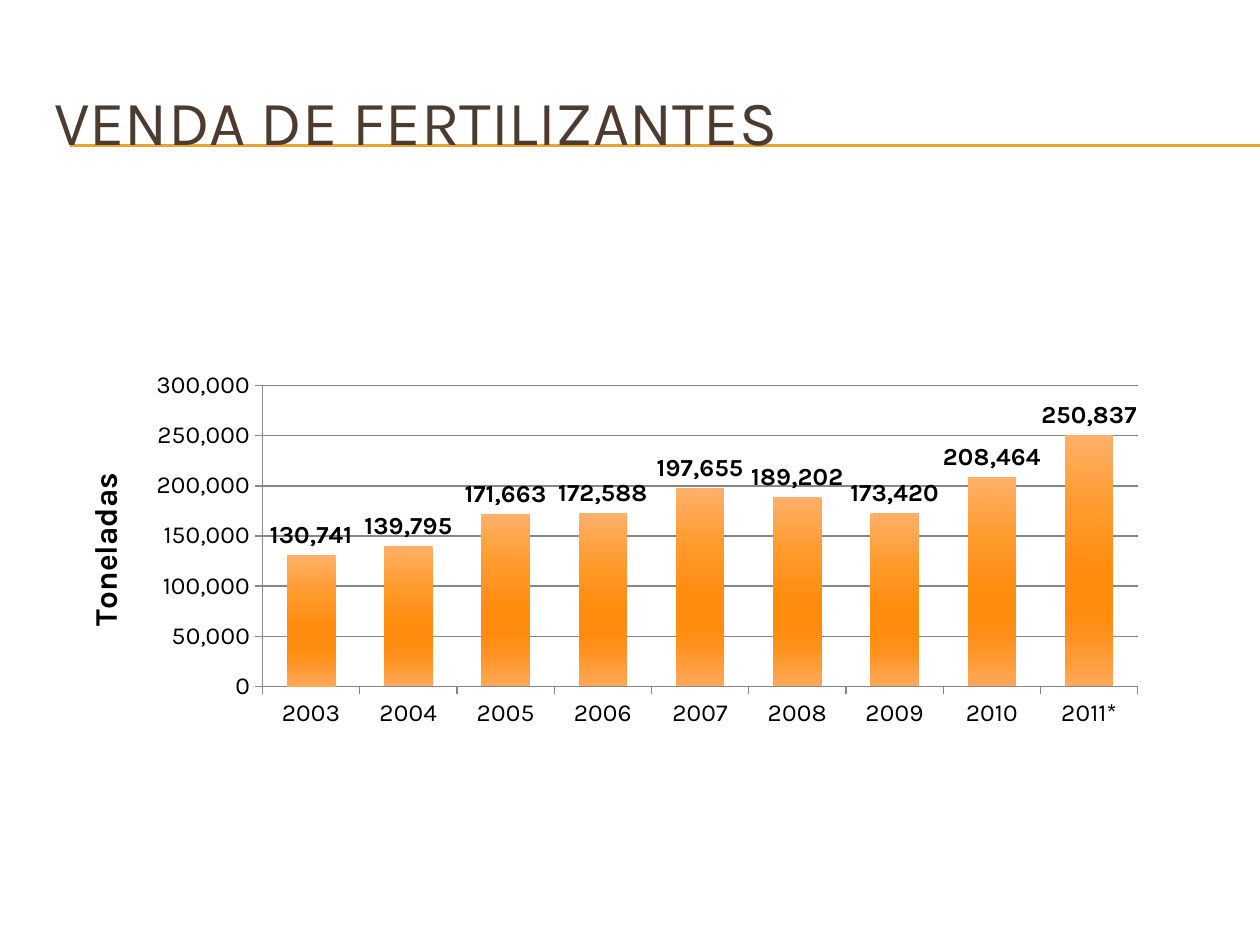
from dataclasses import dataclass
from typing import Any

from lxml.etree import SubElement
from pptx import Presentation
from pptx.chart.data import CategoryChartData as ChartData
from pptx.dml.color import RGBColor as Color
from pptx.enum.chart import XL_CHART_TYPE as ChartType
from pptx.enum.chart import XL_LABEL_POSITION as LabelPosition
from pptx.enum.chart import XL_TICK_MARK as TickMark
from pptx.enum.shapes import MSO_CONNECTOR as Connector
from pptx.enum.text import MSO_ANCHOR as Anchor
from pptx.enum.text import PP_ALIGN as Align
from pptx.oxml import parse_xml
from pptx.oxml.ns import nsdecls, qn
from pptx.util import Pt

COLORS = {
    "title": "4E3B30",
    "rule": "F0A22E",
    "text": "000000",
    "axis": "878787",
    "bar_top": "FFB069",
    "bar_upper": "FF9A2B",
    "bar_middle": "FF8C0F",
    "bar_lower": "FF921F",
    "bar_bottom": "FFA95A",
}
BAR_STOPS = {0: "bar_top", 30: "bar_upper", 55: "bar_middle", 70: "bar_middle",
             80: "bar_lower", 100: "bar_bottom"}
FONT = "Karla"
NUMBER_FORMAT = "#,##0"
SALES = {
    "2003": 130741, "2004": 139795, "2005": 171663,
    "2006": 172588, "2007": 197655, "2008": 189202,
    "2009": 173420, "2010": 208464, "2011*": 250837,
}
PLOT_LAYOUT = {"layoutTarget": "inner", "xMode": "edge", "yMode": "edge",
               "x": 0.183, "y": 0.149, "w": 0.792, "h": 0.696}
PLOT_LAYOUT = {name: str(value) for name, value in PLOT_LAYOUT.items()}


@dataclass
class Rule:
    left: float
    right: float
    top: float


RULES = [Rule(40.3, 720, top) for top in (82.8, 83.5)]


def set_attributes(target: Any, values: dict) -> None:
    for name, value in values.items():
        setattr(target, name, value)


def set_font(font: Any, size: float, color: str = "text", bold: bool = False) -> None:
    set_attributes(font, {"name": FONT, "size": Pt(size), "bold": bold})
    font.color.rgb = Color.from_string(COLORS[color])


def set_line(line: Any, color: str) -> None:
    line.width = Pt(0.75)
    line.color.rgb = Color.from_string(COLORS[color])


def draw_rule(slide: Any, rule: Rule) -> None:
    connector = slide.shapes.add_connector(
        Connector.STRAIGHT, Pt(rule.left), Pt(rule.top), Pt(rule.right), Pt(rule.top))
    set_line(connector.line, "rule")
    SubElement(connector.element.spPr, qn("a:effectLst"))


def draw_title(slide: Any, text: str) -> None:
    title = slide.shapes.title
    set_attributes(title, {"left": Pt(23.75), "top": Pt(36), "width": Pt(684), "height": Pt(66)})
    frame = title.text_frame
    set_attributes(frame, {"text": text, "word_wrap": True, "vertical_anchor": Anchor.MIDDLE})
    paragraph = frame.paragraphs[0]
    paragraph.alignment = Align.LEFT
    set_font(paragraph.runs[0].font, 36, "title")
    title.element.getparent().append(title.element)


def format_axis(axis: Any) -> None:
    axis.major_tick_mark = TickMark.OUTSIDE
    set_font(axis.tick_labels.font, 14)
    set_line(axis.format.line, "axis")


def fill_bars(series: Any) -> None:
    stops = "".join(
        f'<a:gs pos="{position * 1000}"><a:srgbClr val="{COLORS[name]}"/></a:gs>'
        for position, name in BAR_STOPS.items())
    properties = series.format.fill._xPr
    properties.insert(0, parse_xml(
        f'<a:gradFill {nsdecls("a")} rotWithShape="1"><a:gsLst>{stops}</a:gsLst>'
        '<a:lin ang="5400000" scaled="0"/></a:gradFill>'))
    series.format.line.fill.background()


def place_plot(chart: Any) -> None:
    plot_area = chart._chartSpace.chart.plotArea
    for layout in plot_area.findall(qn("c:layout")):
        plot_area.remove(layout)
    layout = parse_xml(f'<c:layout {nsdecls("c")}/>')
    manual = SubElement(layout, qn("c:manualLayout"))
    for name, value in PLOT_LAYOUT.items():
        SubElement(manual, qn(f"c:{name}")).set("val", value)
    plot_area.insert(0, layout)


def draw_chart(slide: Any) -> None:
    data = ChartData(number_format=NUMBER_FORMAT)
    data.categories = list(SALES)
    data.add_series("Series 1", list(SALES.values()))
    chart = slide.shapes.add_chart(
        ChartType.COLUMN_CLUSTERED, Pt(34.5), Pt(183.6), Pt(631.5), Pt(247), data).chart
    set_attributes(chart, {"has_legend": False, "has_title": False})
    set_font(chart.font, 18)

    format_axis(chart.category_axis)
    value_axis = chart.value_axis
    format_axis(value_axis)
    set_attributes(value_axis, {"minimum_scale": 0, "maximum_scale": 300000,
                                "major_unit": 50000, "has_major_gridlines": True})
    set_line(value_axis.major_gridlines.format.line, "axis")
    number_format = {"number_format": NUMBER_FORMAT, "number_format_is_linked": False}
    set_attributes(value_axis.tick_labels, number_format)
    title_frame = value_axis.axis_title.text_frame
    title_frame.text = "Toneladas"
    set_font(title_frame.paragraphs[0].runs[0].font, 18, bold=True)

    plot = chart.plots[0]
    set_attributes(plot, {"gap_width": 100, "vary_by_categories": False})
    series = plot.series[0]
    fill_bars(series)
    labels = series.data_labels
    set_attributes(labels, {"show_value": True, "position": LabelPosition.OUTSIDE_END,
                            **number_format})
    set_font(labels.font, 14, bold=True)
    place_plot(chart)


def main() -> None:
    presentation = Presentation()
    set_attributes(presentation, {"slide_width": Pt(720), "slide_height": Pt(540)})
    slide = presentation.slides.add_slide(presentation.slide_layouts[5])
    for rule in RULES:
        draw_rule(slide, rule)
    draw_title(slide, "VENDA DE FERTILIZANTES")
    draw_chart(slide)
    presentation.save("out.pptx")


if __name__ == "__main__":
    main()
